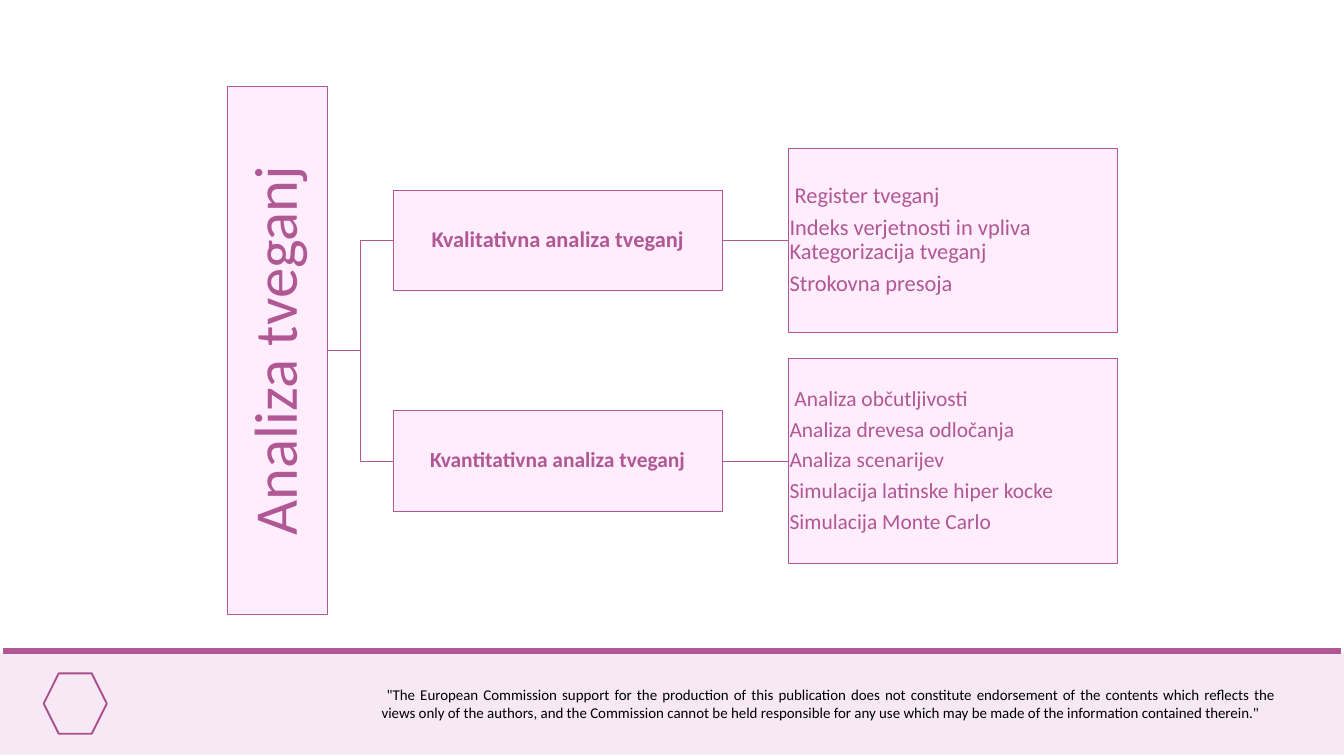
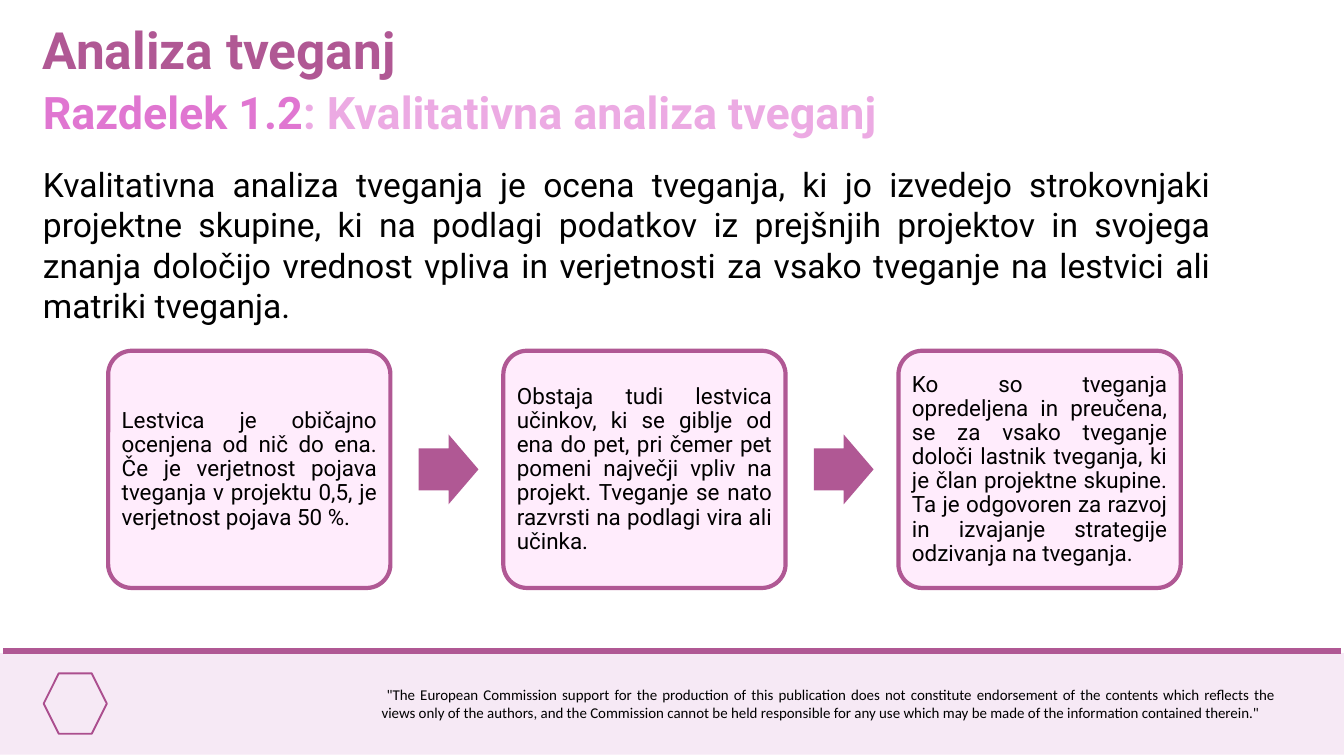
from lxml.etree import SubElement
from pptx import Presentation
from pptx.dml.color import RGBColor
from pptx.enum.shapes import MSO_CONNECTOR, MSO_SHAPE
from pptx.enum.text import MSO_ANCHOR, PP_ALIGN
from pptx.oxml.ns import qn
from pptx.util import Inches, Pt

PLUM = RGBColor(0xB0, 0x58, 0x94)
EMBLEM = RGBColor(0xAB, 0x4E, 0x8E)
ORCHID = RGBColor(0xE0, 0x76, 0xD1)
PINK = RGBColor(0xEC, 0xAA, 0xE3)
BLUSH = RGBColor(0xFF, 0xEC, 0xFC)
LILAC = RGBColor(0xF6, 0xE9, 0xF5)
BLACK = RGBColor(0, 0, 0)

# The grid has 20 columns and 11.25 rows of one square cell
COLUMNS, ROWS = 20, 11.25
CELL = Inches(1)

deck = Presentation()
deck.slide_width, deck.slide_height = int(COLUMNS * CELL), int(ROWS * CELL)


def add_box(page, kind, area, fill=None, line=None, weight=1):
    """Add a preset shape, or a text box when kind is None, at grid places."""
    area = [int(value * CELL) for value in area]
    if kind is None:
        return page.shapes.add_textbox(*area)
    box = page.shapes.add_shape(kind, *area)
    box.shadow.inherit = False
    if fill is None:
        box.fill.background()
    else:
        box.fill.solid()
        box.fill.fore_color.rgb = fill
    if line is None:
        box.line.fill.background()
    else:
        box.line.color.rgb = line
        box.line.width = Pt(weight)
    return box


def write(box, lines, font, colour, align=PP_ALIGN.LEFT, inset=None):
    """Write lines into a box; a line is a text or a list of (text, colour).

    Boxes with an inset hold diagram text: centred upright, tightly spaced."""
    frame = box.text_frame
    frame.word_wrap = True
    if inset is not None:
        frame.vertical_anchor = MSO_ANCHOR.MIDDLE
        for side in ("left", "right", "top", "bottom"):
            setattr(frame, f"margin_{side}", Inches(inset))
    for index, line in enumerate(lines):
        para = frame.add_paragraph() if index else frame.paragraphs[0]
        para.alignment = align
        if inset is not None:
            para.line_spacing = 0.9
            para.space_after = Pt(font["size"].pt * 0.35)
        for text, tint in [(line, colour)] if isinstance(line, str) else line:
            span = para.add_run()
            span.text = text
            for name, value in font.items():
                setattr(span.font, name, value)
            span.font.color.rgb = tint


# Shared footer: band, rule, emblem and disclaimer
DISCLAIMER = (
    " \"The European Commission support for the production of this publication "
    "does not constitute endorsement of the contents which reflects the views only "
    "of the authors, and the Commission cannot be held responsible for any use "
    "which may be made of the information contained therein.\""
)
pages = [deck.slides.add_slide(deck.slide_layouts[6]) for _ in range(2)]
for page in pages:
    add_box(page, MSO_SHAPE.RECTANGLE, (0, 9.72, COLUMNS, 1.51), LILAC)
    rule = page.shapes.add_connector(
        MSO_CONNECTOR.STRAIGHT, *[int(value * CELL) for value in (0.05, 9.69, 19.95, 9.69)])
    rule.line.color.rgb = PLUM
    rule.line.width = Pt(6.75)
    SubElement(rule._element.spPr, qn("a:effectLst"))
    add_box(page, MSO_SHAPE.HEXAGON, (0.65, 10.02, 0.94, 0.9), None, EMBLEM, 2)
    note = add_box(page, None, (5.58, 10.15, 13.5, 0.64))
    write(note, [DISCLAIMER], {"name": "Calibri", "size": Pt(16)}, BLACK, PP_ALIGN.JUSTIFY)

tree_page, steps_page = pages

# Slide 1: tree of risk analysis methods
BAR, BRANCH_WIDTH, GAP = 1.49, 4.9, 0.98
branch_left = 5.85
detail_left = branch_left + BRANCH_WIDTH + GAP
branches = [
    ("Kvalitativna analiza tveganj", 3.58, 24, 2.75, [
        " Register tveganj",
        "Indeks verjetnosti in vpliva Kategorizacija tveganj",
        "Strokovna presoja",
    ]),
    ("Kvantitativna analiza tveganj", 6.86, 23, 3.04, [
        " Analiza občutljivosti",
        "Analiza drevesa odločanja",
        "Analiza scenarijev",
        "Simulacija latinske hiper kocke",
        "Simulacija Monte Carlo",
    ]),
]
root_middle = sum(branch[1] for branch in branches) / len(branches)
root_right = branch_left - GAP
root_length = 7.86
root = add_box(
    tree_page, MSO_SHAPE.RECTANGLE,
    (root_right - (BAR + root_length) / 2, root_middle - BAR / 2, root_length, BAR),
    BLUSH, PLUM)
root.rotation = 270
write(root, ["Analiza tveganj"], {"name": "Calibri", "size": Pt(65)}, PLUM,
      PP_ALIGN.CENTER, 0.05)

for title, middle, size, detail_height, methods in branches:
    font = {"name": "Calibri", "size": Pt(size)}
    branch = add_box(tree_page, MSO_SHAPE.RECTANGLE,
                     (branch_left, middle - BAR / 2, BRANCH_WIDTH, BAR), BLUSH, PLUM)
    write(branch, [title], {**font, "bold": True}, PLUM, PP_ALIGN.CENTER, 0.02)
    detail = add_box(tree_page, MSO_SHAPE.RECTANGLE,
                     (detail_left, middle - detail_height / 2, BRANCH_WIDTH, detail_height),
                     BLUSH, PLUM)
    write(detail, methods, font, PLUM, inset=0.02)

    # Lines from the root to the branch and on to its methods
    fork = tree_page.shapes.add_connector(
        MSO_CONNECTOR.ELBOW,
        *[int(value * CELL) for value in (root_right, root_middle, branch_left, middle)])
    link = tree_page.shapes.add_connector(MSO_CONNECTOR.STRAIGHT, 0, 0, 0, 0)
    link.begin_connect(branch, 3)
    link.end_connect(detail, 1)
    for line in (fork, link):
        line.line.color.rgb = PLUM
        line.line.width = Pt(1)
        SubElement(line._element.spPr, qn("a:effectLst"))

# Slide 2: headings and introduction
LEFT = 0.54
heading = add_box(steps_page, None, (LEFT, 0.22, 10.46, 1.03))
write(heading, ["Analiza tveganj"], {"name": "Roboto", "size": Pt(55), "bold": True}, PLUM)
section = add_box(steps_page, None, (LEFT, 1.21, 14.87, 0.91))
write(section, [[("Razdelek 1.2", ORCHID), (": Kvalitativna analiza tveganj", PINK)]],
      {"name": "Roboto", "size": Pt(48), "bold": True}, ORCHID)
intro = add_box(steps_page, None, (LEFT, 2.39, 17.58, 2.52))
write(intro, [
    "Kvalitativna analiza tveganja je ocena tveganja, ki jo izvedejo strokovnjaki "
    "projektne skupine, ki na podlagi podatkov iz prejšnjih projektov in svojega "
    "znanja določijo vrednost vpliva in verjetnosti za vsako tveganje na lestvici "
    "ali matriki tveganja."
], {"name": "Roboto", "size": Pt(36)}, BLACK, PP_ALIGN.JUSTIFY)

# Slide 2: three steps with arrows between them
steps = [
    "Lestvica je običajno ocenjena od nič do ena. Če je verjetnost pojava tveganja "
    "v projektu 0,5, je verjetnost pojava 50 %.",
    "Obstaja tudi lestvica učinkov, ki se giblje od ena do pet, pri čemer pet pomeni "
    "največji vpliv na projekt. Tveganje se nato razvrsti na podlagi vira ali učinka.",
    "Ko so tveganja opredeljena in preučena, se za vsako tveganje določi lastnik "
    "tveganja, ki je član projektne skupine. Ta je odgovoren za razvoj in izvajanje "
    "strategije odzivanja na tveganja.",
]
CARD_WIDTH, CARD_HEIGHT, CARD_TOP, PITCH = 4.2, 3.53, 5.22, 5.88
ARROW_WIDTH, ARROW_HEIGHT = 0.89, 1.04
for index, step in enumerate(steps):
    left = 1.61 + index * PITCH
    card = add_box(steps_page, MSO_SHAPE.ROUNDED_RECTANGLE,
                   (left, CARD_TOP, CARD_WIDTH, CARD_HEIGHT), BLUSH, PLUM, 4.5)
    card.adjustments[0] = 0.1
    write(card, [step], {"name": "Roboto", "size": Pt(24)}, BLACK, PP_ALIGN.JUSTIFY, 0.1)
    if index < len(steps) - 1:
        arrow = add_box(
            steps_page, MSO_SHAPE.RIGHT_ARROW,
            (left + CARD_WIDTH + 0.42, CARD_TOP + (CARD_HEIGHT - ARROW_HEIGHT) / 2,
             ARROW_WIDTH, ARROW_HEIGHT), PLUM)
        arrow.adjustments[0] = 0.6
        arrow.adjustments[1] = 0.5

deck.save("out.pptx")
